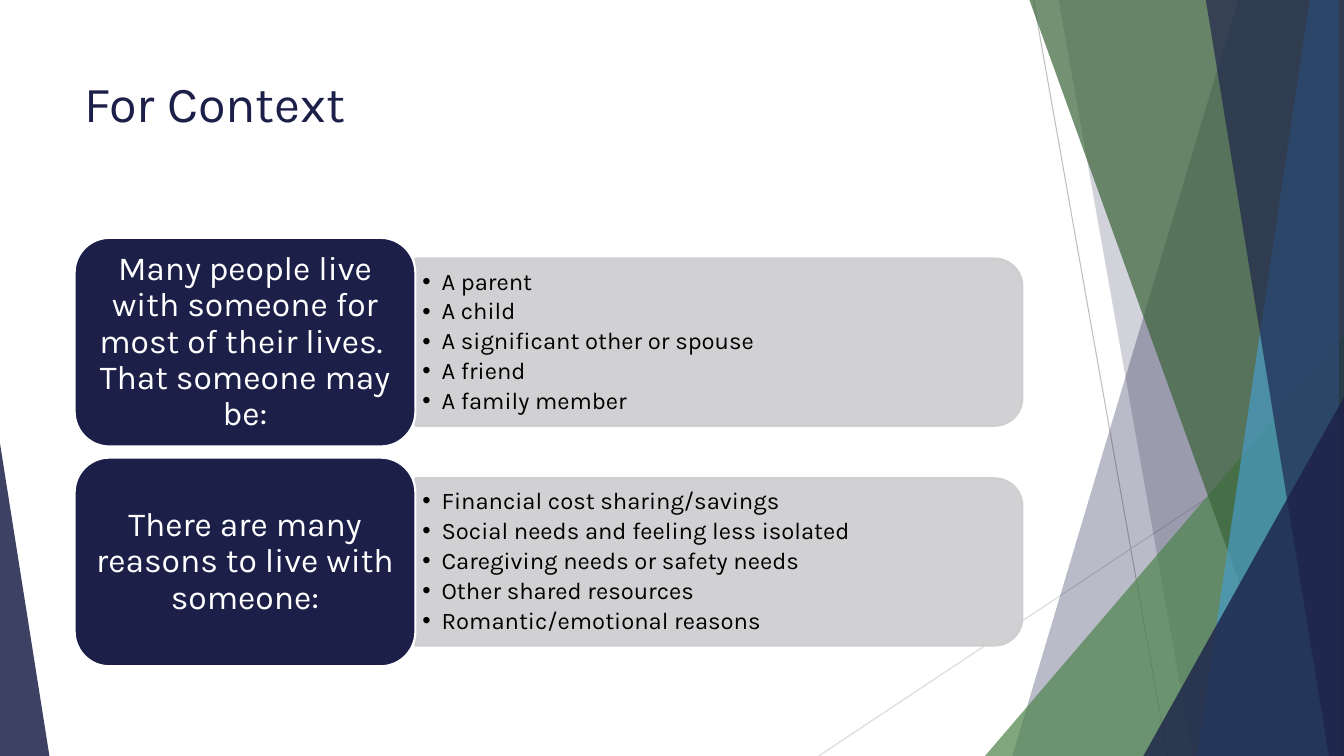
from pptx import Presentation
from pptx.dml.color import RGBColor
from pptx.enum import shapes, text
from pptx.oxml.ns import qn
from pptx.util import Inches, Pt
from lxml import etree

FONT = "Karla"
WIDE, HIGH = 13.33, 7.5
HUES = {"navy": "1C2049", "leaf": "4F844D", "moss": "3B633A", "sky": "489CC7",
        "grey": "CDCDD0", "mid": "BFBFBF", "pale": "D9D9D9",
        "white": "FFFFFF", "black": "000000"}
KIND = shapes.MSO_SHAPE
ALIGN = text.PP_ALIGN
ANCHOR = text.MSO_ANCHOR

ROWS = [
    ("Many people live with someone for most of their lives.  That someone may be:",
     ["A parent", "A child", "A significant other or spouse", "A friend",
      "A family member"]),
    ("There are many reasons to live with someone:",
     ["Financial cost sharing/savings", "Social needs and feeling less isolated",
      "Caregiving needs or safety needs", "Other shared resources",
      "Romantic/emotional reasons"]),
]


def tint(fill, hue, alpha=100):
    """Set a solid colour with an opacity in percent."""
    fill.solid()
    fill.fore_color.rgb = RGBColor.from_string(HUES[hue])
    if alpha < 100:
        color = fill._xPr.find(qn("a:solidFill"))[0]
        etree.SubElement(color, qn("a:alpha"), val=str(alpha * 1000))


def paint(shape, hue, alpha=100, edge=None):
    shape.shadow.inherit = False
    tint(shape.fill, hue, alpha)
    if edge:
        shape.line.width = Pt(1.5)
        tint(shape.line.fill, edge, alpha)
    else:
        shape.line.fill.background()


def add_shape(slide, kind, box):
    return slide.shapes.add_shape(kind, *map(Inches, box))


def add_line(slide, ends, hue):
    line = slide.shapes.add_connector(shapes.MSO_CONNECTOR.STRAIGHT,
                                      *map(Inches, ends))
    line.line.width = Pt(0.75)
    tint(line.line.fill, hue)
    etree.SubElement(line._element.spPr, qn("a:effectLst"))


def add_band(slide, top, foot, hue, alpha):
    """Draw a strip from its (left, right) at the top to those at the foot."""
    pts = [(top[0], 0), (top[1], 0), (foot[1], HIGH), (foot[0], HIGH)]
    pts = [(Inches(x), Inches(y)) for x, y in pts]
    form = slide.shapes.build_freeform(*pts[0])
    form.add_line_segments(pts[1:], close=True)
    paint(form.convert_to_shape(), hue, alpha)


def add_wedge(slide, box, tip, hue, alpha):
    wedge = add_shape(slide, KIND.ISOSCELES_TRIANGLE, box)
    wedge.adjustments[0] = tip
    paint(wedge, hue, alpha)


def add_decor(slide):
    add_line(slide, (10.25, 0, 11.58, HIGH), "mid")
    add_line(slide, (WIDE, 4.04, 8.12, HIGH), "pale")
    add_band(slide, (12.28, WIDE), (10.04, WIDE), "navy", 30)
    add_band(slide, (10.5, WIDE), (11.83, WIDE), "navy", 20)
    add_wedge(slide, (9.77, 3.34, 3.56, 4.16), 1, "leaf", 72)
    add_band(slide, (10.21, WIDE), (12.91, WIDE), "moss", 70)
    add_band(slide, (12.99, 13.28), (11.87, 13.28), "sky", 70)
    add_band(slide, (11.96, WIDE), (13.18, WIDE), "navy", 65)
    add_wedge(slide, (11.34, 3.94, 1.99, 3.56), 1, "navy", 80)
    add_wedge(slide, (0, 4.4, 0.49, 3.1), 0, "navy", 85)


def write(shape, words, size, hue, inset, anchor, align=ALIGN.LEFT, space=1):
    frame = shape.text_frame
    frame.text = words
    frame.word_wrap = True
    frame.vertical_anchor = anchor
    frame.margin_left = frame.margin_right = Inches(inset[0])
    frame.margin_top = frame.margin_bottom = Inches(inset[1])
    for para in frame.paragraphs:
        para.alignment = align
        para.line_spacing = space
        for run in para.runs:
            run.font.size = Pt(size)
            run.font.name = FONT
            run.font.color.rgb = RGBColor.from_string(HUES[hue])
    return frame


def add_title(slide, box):
    title = slide.shapes.add_textbox(*map(Inches, box))
    write(title, "For Context", 36, "navy", (0.1, 0.05), ANCHOR.TOP)


def add_list(slide, items, box):
    area = slide.shapes.add_textbox(*map(Inches, box))
    frame = write(area, "\n".join(items), 17, "black", (0.07, 0.04),
                  ANCHOR.MIDDLE, space=0.9)
    for para in frame.paragraphs:
        para.space_after = Pt(3)
        props = para._p.get_or_add_pPr()
        props.set("marL", str(Inches(0.19)))
        props.set("indent", str(-Inches(0.19)))
        etree.SubElement(props, qn("a:buFont"), typeface="Arial")
        etree.SubElement(props, qn("a:buChar"), char="•")


def add_row(slide, head, items, box):
    """Place a navy heading and, to its right, a grey bar with the list."""
    left, top, width, high = box
    lead, thick = 3.38, 1.66
    long = width - lead
    start, mid = left + lead, top + high / 2
    bar = add_shape(slide, KIND.ROUND_2_SAME_RECTANGLE,
                    (start + (long - thick) / 2, mid - long / 2, thick, long))
    bar.rotation = 90
    paint(bar, "grey", 90, "grey")
    add_list(slide, items, (start, mid - 0.75, long - 0.08, 1.5))
    card = add_shape(slide, KIND.ROUNDED_RECTANGLE, (left, top, lead, high))
    paint(card, "navy", edge="white")
    write(card, head, 24, "white", (0.1, 0.05), ANCHOR.MIDDLE, ALIGN.CENTER, 0.9)


def main():
    deck = Presentation()
    deck.slide_width, deck.slide_height = Inches(WIDE), Inches(HIGH)
    slide = deck.slides.add_slide(deck.slide_layouts[6])
    add_decor(slide)
    add_title(slide, (0.74, 0.67, 9.4, 0.82))
    for i, (head, items) in enumerate(ROWS):
        add_row(slide, head, items, (0.74, 2.36 + i * 2.18, 9.4, 2.07))
    deck.save("out.pptx")


if __name__ == "__main__":
    main()
